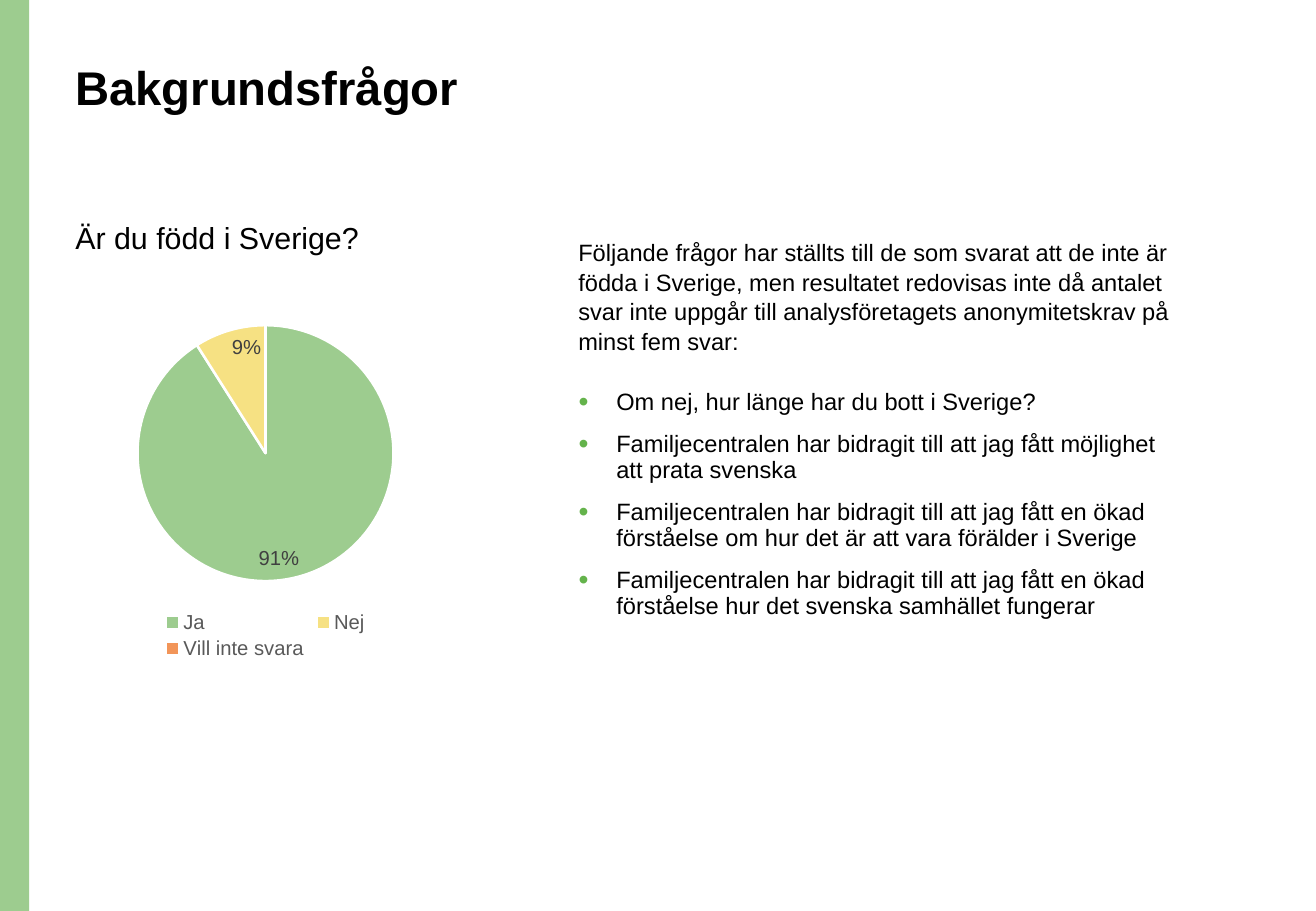
"""Build the slide on background questions with a pie chart and a list."""
import pptx
import pptx.chart.data
import pptx.dml.color
import pptx.enum.chart
import pptx.enum.shapes
import pptx.enum.text
import pptx.oxml
import pptx.oxml.ns
import pptx.util
from dataclasses import dataclass

Cm, Pt = pptx.util.Cm, pptx.util.Pt

TITLE = "Bakgrundsfrågor"
ASK = "Är du född i Sverige?"
INTRO = ("Följande frågor har ställts till de som svarat att de inte är födda i Sverige, "
         "men resultatet redovisas inte då antalet svar inte uppgår till analysföretagets "
         "anonymitetskrav på minst fem svar:\u00a0")
ITEMS = [
    "Om nej, hur länge har du bott i Sverige?",
    "Familjecentralen har bidragit till att jag fått möjlighet att prata svenska",
    "Familjecentralen har bidragit till att jag fått en ökad förståelse om hur det är "
    "att vara förälder i Sverige",
    "Familjecentralen har bidragit till att jag fått en ökad förståelse hur det svenska "
    "samhället fungerar",
]
SHARES = {"Ja": 0.91, "Nej": 0.09, "Vill inte svara": 0}

SIZE = 27.51, 19.05
LEFT, RIGHT = 1.32, 11.84
BOXES = {
    "bar": (0, 0, 0.61, SIZE[1]),
    "title": (LEFT, 1.22, 23.72, 2.59),
    "ask": (LEFT, 4.55, 11.63, 1.17),
    "chart": (LEFT, 6.45, 8.46, 7.44),
    "list": (RIGHT, 8.03, 12.78, 5.26),
    "intro": (RIGHT, 4.83, 13.23, 2.64),
}


@dataclass(frozen=True)
class Theme:
    """Hold the colours and type sizes."""
    font: str = "Arial"
    ink: str = "000000"
    paper: str = "FFFFFF"
    label: str = "404040"
    legend: str = "595959"
    bullet: str = "64B34B"
    slices: tuple = ("9DCC8F", "F6E183", "F29559")
    head: int = 28
    lead: int = 18
    body: int = 14
    small: int = 12


LOOK = Theme()


def rgb(code):
    """Return a colour from its hex code."""
    return pptx.dml.color.RGBColor.from_string(code)


def put(item, form):
    """Set each attribute named in the dict."""
    for name, value in form.items():
        setattr(item, name, value)


def area(name):
    """Return the box of a part as lengths."""
    return [Cm(side) for side in BOXES[name]]


def style(font, size, color=LOOK.ink, bold=False):
    """Format a font."""
    put(font, {"name": LOOK.font, "size": Pt(size), "bold": bold})
    font.color.rgb = rgb(color)


def write(shape, name, lines, size, bold=False, space=0.9, before=0):
    """Place a text shape and fill in its paragraphs."""
    put(shape, dict(zip(("left", "top", "width", "height"), area(name))))
    frame = shape.text_frame
    frame.text = "\n".join(lines)
    put(frame, {"word_wrap": True,
                "auto_size": pptx.enum.text.MSO_AUTO_SIZE.NONE,
                "vertical_anchor": pptx.enum.text.MSO_ANCHOR.TOP})
    for para in frame.paragraphs:
        put(para, {"alignment": pptx.enum.text.PP_ALIGN.LEFT,
                   "line_spacing": space, "space_before": Pt(before)})
        style(para.runs[0].font, size, bold=bold)
    return frame.paragraphs


def mark(para, indent, *tags):
    """Set the indent and bullet of a paragraph."""
    props = para._p.get_or_add_pPr()
    props.set("marL", str(indent))
    props.set("indent", str(-indent))
    for tag in tags:
        head, rest = tag[:-2], pptx.oxml.ns.nsdecls("a")
        props.append(pptx.oxml.parse_xml(f"<a:{head} {rest}/>"
                                         if tag.endswith("/>") else tag))


def dot(para):
    """Give a paragraph a coloured bullet."""
    space = pptx.oxml.ns.nsdecls("a")
    mark(para, Cm(0.79),
         f'<a:buClr {space}><a:srgbClr val="{LOOK.bullet}"/></a:buClr>',
         'buSzPct val="120000"/>', 'buFont typeface="Arial"/>', 'buChar char="•"/>')


def draw(slide):
    """Add the pie chart."""
    data = pptx.chart.data.CategoryChartData()
    data.categories = list(SHARES)
    data.add_series("Series 1", list(SHARES.values()))
    kind = pptx.enum.chart.XL_CHART_TYPE.PIE
    chart = slide.shapes.add_chart(kind, *area("chart"), data).chart
    put(chart, {"has_title": False, "has_legend": True})
    style(chart.font, LOOK.small)
    put(chart.legend, {"position": pptx.enum.chart.XL_LEGEND_POSITION.BOTTOM,
                       "include_in_layout": False})
    style(chart.legend.font, LOOK.small, LOOK.legend)
    plot = chart.plots[0]
    put(plot, {"vary_by_categories": True, "has_data_labels": True})
    labels = plot.data_labels
    put(labels, {"show_value": True, "show_percentage": False,
                 "number_format": '[<0.01]"";[>0.01]0%',
                 "number_format_is_linked": False,
                 "position": pptx.enum.chart.XL_LABEL_POSITION.INSIDE_END})
    style(labels.font, LOOK.small, LOOK.label)
    for index, color in enumerate(LOOK.slices):
        form = plot.series[0].points[index].format
        form.fill.solid()
        form.fill.fore_color.rgb = rgb(color)
        form.line.color.rgb = rgb(LOOK.paper)
        form.line.width = Pt(1.5)


def main():
    """Build and save the slide."""
    deck = pptx.Presentation()
    put(deck, {"slide_width": Cm(SIZE[0]), "slide_height": Cm(SIZE[1])})
    slide = deck.slides.add_slide(deck.slide_layouts[3])
    title, ask, items = slide.placeholders

    bar = slide.shapes.add_shape(pptx.enum.shapes.MSO_SHAPE.RECTANGLE, *area("bar"))
    bar.shadow.inherit = False
    bar.fill.solid()
    bar.fill.fore_color.rgb = rgb(LOOK.slices[0])
    bar.line.fill.background()

    write(title, "title", [TITLE], LOOK.head, bold=True)
    for para in write(ask, "ask", [ASK], LOOK.lead, before=10):
        mark(para, 0, "buNone/>")
    draw(slide)
    for para in write(items, "list", ITEMS, LOOK.body, before=10):
        dot(para)
    intro = slide.shapes.add_textbox(*area("intro"))
    write(intro, "intro", [INTRO], LOOK.body, space=1.04)
    deck.save("out.pptx")


if __name__ == "__main__":
    main()
